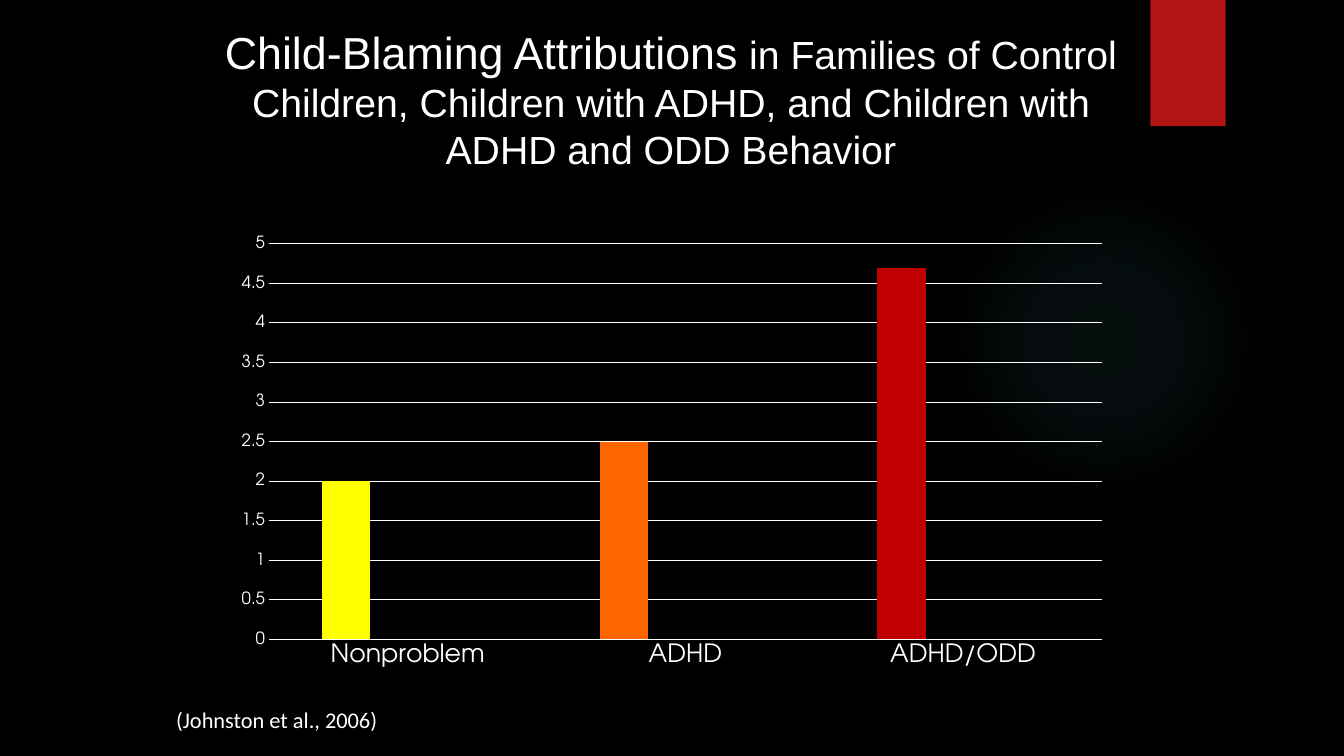
from lxml import etree
from pptx import Presentation
from pptx.chart.data import CategoryChartData
from pptx.dml.color import RGBColor
from pptx.enum.chart import XL_CHART_TYPE as ChartType, XL_TICK_MARK as TickMark
from pptx.enum.shapes import MSO_SHAPE as Preset
from pptx.enum.text import MSO_ANCHOR as Anchor, MSO_AUTO_SIZE as AutoSize, PP_ALIGN as Align
from pptx.oxml import parse_xml
from pptx.oxml.ns import nsdecls, qn
from pptx.util import Cm, Pt

WHITE = "FFFFFF"
CHART_FONT = "TeX Gyre Adventor"


def color(hex_string):
    return RGBColor.from_string(hex_string)


def set_font(font, size, name):
    font.size, font.name = Pt(size), name
    font.color.rgb = color(WHITE)


def set_fill(fill, hex_string):
    fill.solid()
    fill.fore_color.rgb = color(hex_string)


def set_line(line):
    line.color.rgb = color(WHITE)
    line.width = Pt(0.75)


def add_plain_shape(slide, preset, left, top, width, height, hex_string):
    shape = slide.shapes.add_shape(preset, Cm(left), Cm(top), Cm(width), Cm(height))
    shape.shadow.inherit = False
    set_fill(shape.fill, hex_string)
    shape.line.fill.background()
    return shape


def add_glow(slide):
    tint = "50B9C1"
    glow = add_plain_shape(slide, Preset.OVAL, 23.9, 4.65, 7.82, 7.82, tint)
    # Radial fade from the centre, as (position, opacity) in percent
    stops = "".join(
        f'<a:gs pos="{position * 1000}"><a:srgbClr val="{tint}">'
        f'<a:alpha val="{opacity * 1000}"/></a:srgbClr></a:gs>'
        for position, opacity in [(0, 7), (36, 6), (69, 0)])
    gradient = parse_xml(
        f'<a:gradFill {nsdecls("a")}><a:gsLst>{stops}</a:gsLst><a:path path="circle">'
        '<a:fillToRect l="50000" t="50000" r="50000" b="50000"/></a:path></a:gradFill>')
    properties = glow.element.spPr
    properties.replace(properties.find(qn("a:solidFill")), gradient)


def add_title(slide, parts):
    title = slide.shapes.title
    title.left, title.top, title.width, title.height = Cm(5.08), Cm(0.64), Cm(23.65), Cm(3.68)
    frame = title.text_frame
    frame.auto_size, frame.word_wrap = AutoSize.NONE, True
    frame.vertical_anchor = Anchor.MIDDLE
    paragraph = frame.paragraphs[0]
    paragraph.alignment = Align.CENTER
    for text, size in parts:
        run = paragraph.add_run()
        run.text = text
        set_font(run.font, size, "Arial")


def add_citation(slide, text):
    box = slide.shapes.add_textbox(Cm(4.19), Cm(17.68), Cm(5.64), Cm(0.94))
    frame = box.text_frame
    frame.word_wrap, frame.auto_size = False, AutoSize.SHAPE_TO_FIT_TEXT
    paragraph = frame.paragraphs[0]
    paragraph.text = text
    set_font(paragraph.font, 16, "Calibri")


def style_axis(axis, size):
    axis.major_tick_mark = axis.minor_tick_mark = TickMark.NONE
    set_font(axis.tick_labels.font, size, CHART_FONT)


def add_attribution_chart(slide):
    data = CategoryChartData()
    data.categories = ["Nonproblem", "ADHD", "ADHD/ODD"]
    data.add_series("Series 1", [2, 2.5, 4.7])
    data.add_series("Series 2", [None] * 3)
    data.add_series("Series 3", [None] * 3)
    chart = slide.shapes.add_chart(
        ChartType.COLUMN_CLUSTERED, Cm(5.64), Cm(5.72), Cm(22.58), Cm(11.33), data).chart
    chart.has_legend = chart.has_title = False
    set_font(chart.font, 10, CHART_FONT)

    # Axes and gridlines
    style_axis(chart.category_axis, 18)
    set_line(chart.category_axis.format.line)
    values = chart.value_axis
    style_axis(values, 12)
    values.format.line.fill.background()
    values.minimum_scale, values.maximum_scale, values.major_unit = 0, 5, 0.5
    set_line(values.major_gridlines.format.line)

    # Columns
    plot = chart.plots[0]
    plot.gap_width, plot.overlap, plot.vary_by_categories = 219, -27, False
    for series, hex_string in zip(plot.series, ["FFFF00", "EA6312", "E6B729"]):
        set_fill(series.format.fill, hex_string)
    for index, hex_string in [(1, "FF6600"), (2, "C00000")]:
        set_fill(plot.series[0].points[index].format.fill, hex_string)


def main():
    presentation = Presentation()
    presentation.slide_width, presentation.slide_height = Cm(33.87), Cm(19.05)
    slide = presentation.slides.add_slide(presentation.slide_layouts[5])
    set_fill(slide.background.fill, "000000")

    # Backdrop
    add_glow(slide)
    ribbon = add_plain_shape(slide, Preset.RECTANGLE, 28.99, 0, 1.9, 3.18, "B01513")
    effects = ribbon.element.spPr.find(qn("a:effectLst"))
    shadow = etree.SubElement(effects, qn("a:outerShdw"), blurRad=str(Pt(3)),
                              dist=str(Pt(2)), dir="5400000", rotWithShape="0")
    shade = etree.SubElement(shadow, qn("a:srgbClr"), val="000000")
    etree.SubElement(shade, qn("a:alpha"), val="45000")

    # Content
    add_title(slide, [
        ("Child-Blaming Attributions", 32),
        (" in Families of Control Children, Children with ADHD, "
         "and Children with ADHD and ODD Behavior", 28)])
    add_citation(slide, "(Johnston et al., 2006)")
    add_attribution_chart(slide)
    presentation.save("out.pptx")


if __name__ == "__main__":
    main()
